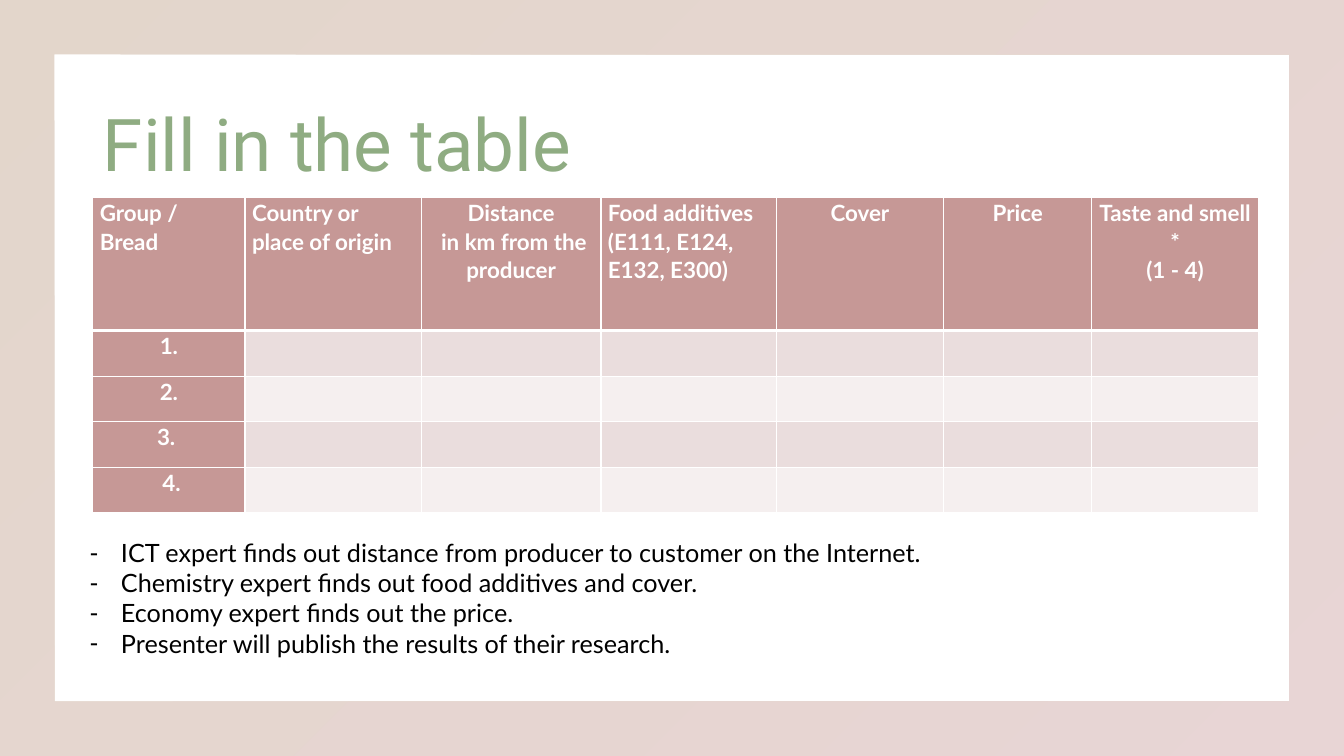
from lxml.etree import SubElement
from pptx import Presentation
from pptx.dml.color import RGBColor
from pptx.enum.shapes import MSO_SHAPE as Shape
from pptx.enum.text import MSO_ANCHOR as Anchor, MSO_AUTO_SIZE as AutoSize, PP_ALIGN as Align
from pptx.oxml.ns import qn
from pptx.util import Inches, Pt

COLORS = {
    "frame_start": "BA997F", "frame_end": "C69896", "title": "8FAC82",
    "header": "C69896", "band_dark": "EADDDD", "band_light": "F5EFEF",
    "white": "FFFFFF", "black": "000000",
}
TITLE = "Fill in the table"
# heading, alignment, column width
COLUMNS = [
    ("Group / Bread", Align.LEFT, 1.51),
    ("Country or place of origin", Align.LEFT, 1.75),
    ("Distance\n in km from the producer", Align.CENTER, 1.78),
    ("Food additives (E111, E124, E132, E300)", Align.LEFT, 1.74),
    ("Cover", Align.CENTER, 1.66),
    ("Price", Align.CENTER, 1.47),
    ("Taste and smell *\n(1 - 4)", Align.CENTER, 1.65),
]
GROUPS = ["1.", "2.", "3. ", " 4."]
TASKS = [
    "ICT expert finds out distance from producer to customer on the Internet.",
    "Chemistry expert finds out food additives and cover.",
    "Economy expert finds out the price.",
    "Presenter will publish the results of their research.",
]
TABLE_HEIGHT, HEADER_HEIGHT = 3.13, 1.32


def color(name):
    return RGBColor.from_string(COLORS[name])


def place(shape, left, top, width, height):
    shape.left, shape.top = Inches(left), Inches(top)
    shape.width, shape.height = Inches(width), Inches(height)


def add_text(paragraph, text, size, font, color_name, bold=False):
    """Add one run per line, with line breaks between them."""
    for number, line in enumerate(text.split("\n")):
        if number:
            paragraph.add_line_break()
        run = paragraph.add_run()
        run.text = line
        run.font.size, run.font.name, run.font.bold = Pt(size), font, bold
        run.font.color.rgb = color(color_name)


def set_borders(cell, top, bottom):
    properties = cell._tc.get_or_add_tcPr()
    for side, width in (("L", 1), ("R", 1), ("T", top), ("B", bottom)):
        line = SubElement(properties, qn(f"a:ln{side}"), w=str(Pt(width)))
        fill = SubElement(line, qn("a:solidFill"))
        SubElement(fill, qn("a:srgbClr"), val=COLORS["white"])


def style_cell(cell, fill_name, top=1, bottom=1):
    set_borders(cell, top, bottom)
    cell.fill.solid()
    cell.fill.fore_color.rgb = color(fill_name)
    cell.margin_left = cell.margin_right = Inches(0.07)
    cell.margin_top = cell.margin_bottom = 0


def label_cell(cell, text, alignment):
    paragraph = cell.text_frame.paragraphs[0]
    paragraph.alignment = alignment
    paragraph.line_spacing, paragraph.space_after = 1.07, Pt(8)
    add_text(paragraph, text, 16, "Lato", "white", bold=True)


def add_frame(slide):
    """Add the border with its gradient at 40 % opacity."""
    frame = slide.shapes.add_shape(Shape.FRAME, 0, 0, Inches(13.33), Inches(7.5))
    frame.adjustments[0] = 0.072
    frame.shadow.inherit = False
    frame.line.fill.background()
    frame.fill.gradient()
    frame.fill.gradient_angle = 315
    for stop, name, position in zip(frame.fill.gradient_stops, ("frame_start", "frame_end"), (0, 1)):
        stop.color.rgb = color(name)
        stop.position = position
    for stop_color in frame._element.spPr.iter(qn("a:srgbClr")):
        SubElement(stop_color, qn("a:alpha"), val="40000")


def add_bread_table(slide):
    width = sum(column[2] for column in COLUMNS)
    group_height = (TABLE_HEIGHT - HEADER_HEIGHT) / len(GROUPS)
    table = slide.shapes.add_table(
        len(GROUPS) + 1, len(COLUMNS),
        Inches(0.92), Inches(1.96), Inches(width), Inches(TABLE_HEIGHT)).table
    table.rows[0].height = Inches(HEADER_HEIGHT)
    for index, (heading, alignment, column_width) in enumerate(COLUMNS):
        table.columns[index].width = Inches(column_width)
        style_cell(table.cell(0, index), "header", bottom=3)
        label_cell(table.cell(0, index), heading, alignment)
    for row, group in enumerate(GROUPS, start=1):
        table.rows[row].height = Inches(group_height)
        band = "band_dark" if row % 2 else "band_light"
        for index in range(len(COLUMNS)):
            style_cell(table.cell(row, index), band if index else "header",
                       top=3 if row == 1 else 1)
        label_cell(table.cell(row, 0), group, Align.CENTER)


def fill_title(title):
    place(title, 0.92, 0.74, 11.5, 1.45)
    title.text_frame.vertical_anchor = Anchor.MIDDLE
    paragraph = title.text_frame.paragraphs[0]
    paragraph.alignment, paragraph.line_spacing = Align.LEFT, 0.9
    add_text(paragraph, TITLE, 52, "Roboto", "title")


def fill_tasks(body):
    place(body, 0.79, 5.28, 10.58, 1.31)
    frame = body.text_frame
    frame.word_wrap, frame.auto_size = True, AutoSize.NONE
    for number, task in enumerate(TASKS):
        paragraph = frame.add_paragraph() if number else frame.paragraphs[0]
        paragraph.space_before = Pt(0)
        properties = paragraph._p.get_or_add_pPr()
        properties.set("marL", str(Inches(0.31)))
        properties.set("indent", str(-Inches(0.31)))
        SubElement(properties, qn("a:buChar"), char="-")
        add_text(paragraph, task, 18, "Lato", "black")


def main():
    deck = Presentation()
    deck.slide_width, deck.slide_height = Inches(13.33), Inches(7.5)
    slide = deck.slides.add_slide(deck.slide_layouts[1])
    add_frame(slide)
    add_bread_table(slide)
    fill_title(slide.shapes.title)
    fill_tasks(slide.placeholders[1])
    deck.save("out.pptx")


if __name__ == "__main__":
    main()
